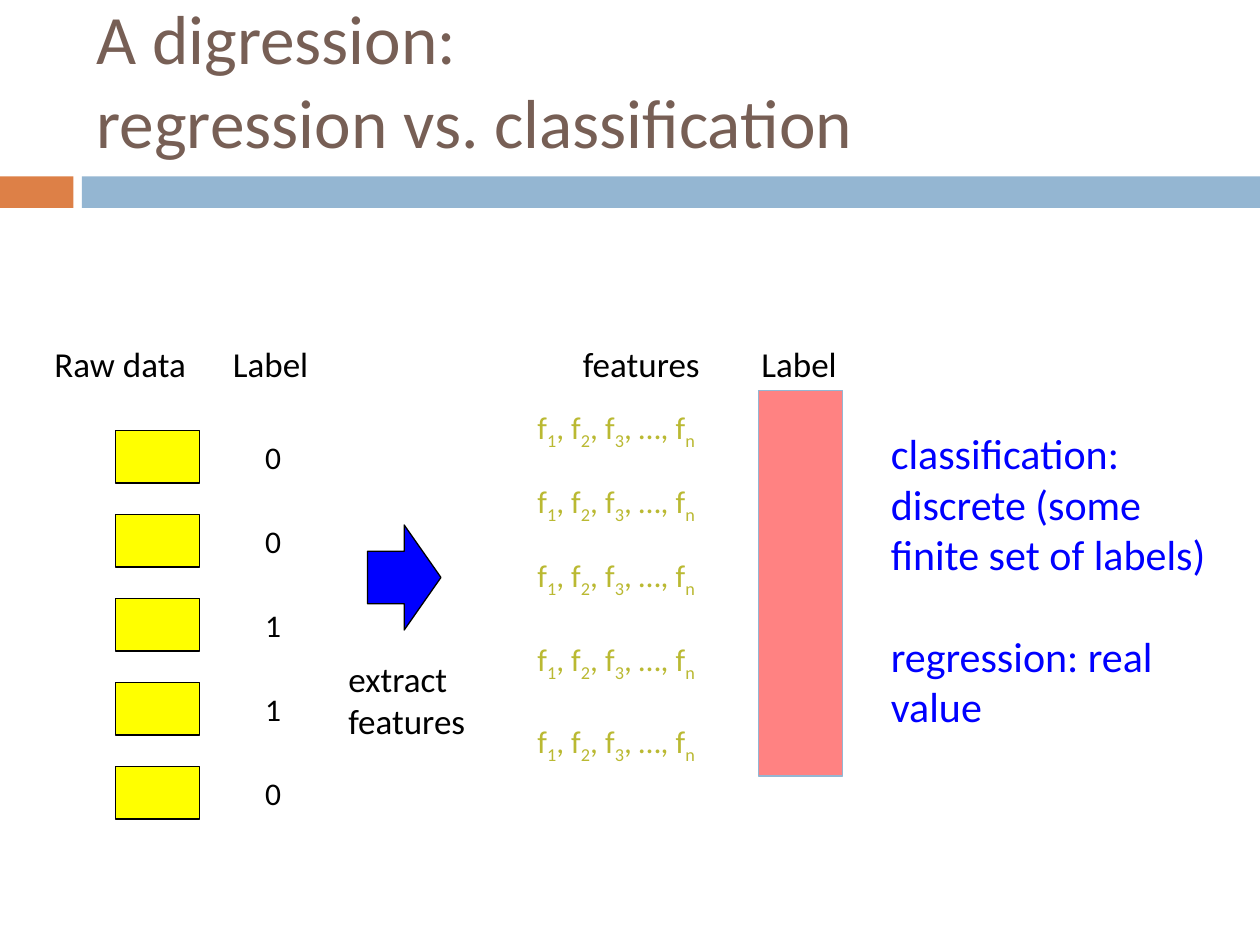
import pptx
import pptx.dml.color
import pptx.enum.shapes
import pptx.enum.text
import pptx.util
from lxml import etree
from pptx.oxml.ns import qn

Pt = pptx.util.Pt
SHAPES = pptx.enum.shapes.MSO_SHAPE
FONT = "Calibri"
COLORS = {
    "title": "775F55",
    "orange": "DD8047",
    "sky": "94B6D2",
    "black": "000000",
    "yellow": "FFFF00",
    "blue": "0000FF",
    "red": "FF0000",
    "olive": "BAB932",
}
ROW_GAP = 48
FEATURES = [("f", 0), ("1", 1), (", f", 0), ("2", 1), (", f", 0), ("3", 1),
            (", …, f", 0), ("n", 1)]


def rgb(name):
    return pptx.dml.color.RGBColor.from_string(COLORS[name])


def add_span(para, text, size, color, subscript=False):
    span = para.add_run()
    span.text = text
    span.font.name = FONT
    span.font.size = Pt(size)
    span.font.color.rgb = rgb(color)
    if subscript:
        span._r.get_or_add_rPr().set("baseline", "-25000")


def add_text(slide, box, paras, size, color="black", wrap=False, gap=0):
    """Add a text box; each paragraph is a list of (text, subscript) runs."""
    frame = slide.shapes.add_textbox(*map(Pt, box)).text_frame
    frame.word_wrap = wrap
    frame.auto_size = pptx.enum.text.MSO_AUTO_SIZE.SHAPE_TO_FIT_TEXT
    for index, spans in enumerate(paras):
        para = frame.add_paragraph() if index else frame.paragraphs[0]
        if index and gap:
            para.space_before = Pt(gap)
        for text, subscript in spans:
            add_span(para, text, size, color, subscript)


def add_block(slide, kind, box, fill, line=None, weight=0.75):
    block = slide.shapes.add_shape(kind, *map(Pt, box))
    block.shadow.inherit = False
    block.fill.solid()
    block.fill.fore_color.rgb = rgb(fill)
    if line:
        block.line.color.rgb = rgb(line)
        block.line.width = Pt(weight)
    else:
        block.line.fill.background()
    return block


def add_header(slide, left, top, width):
    add_block(slide, SHAPES.RECTANGLE, (left, top + 100.8, 42, 18), "orange")
    add_block(slide, SHAPES.RECTANGLE,
              (left + 46.8, top + 100.8, width - 46.8, 18), "sky")
    title = slide.shapes.title
    title.left, title.top = Pt(left + 48), Pt(top + 6)
    title.width, title.height = Pt(642), Pt(78)
    frame = title.text_frame
    frame.word_wrap = True
    frame.auto_size = pptx.enum.text.MSO_AUTO_SIZE.NONE
    frame.vertical_anchor = pptx.enum.text.MSO_ANCHOR.MIDDLE
    para = frame.paragraphs[0]
    para.alignment = pptx.enum.text.PP_ALIGN.LEFT
    add_span(para, "A digression: ", 39.6, "title")
    para.add_line_break()
    add_span(para, "regression vs. classification", 39.6, "title")


def add_raw_data(slide, left, top):
    add_text(slide, (left, top, 100, 31.5), [[("Raw data", 0)]], 20)
    add_text(slide, (left + 102, top, 64, 31.5), [[("Label", 0)]], 20)
    for row, label in enumerate("00110"):
        row_top = top + 54 + row * ROW_GAP
        add_block(slide, SHAPES.RECTANGLE, (left + 42, row_top, 48, 30),
                  "yellow", "black")
        add_text(slide, (left + 120.5, row_top + 0.5, 24.5, 29),
                 [[(label, 0)]], 18)


def add_extraction(slide, left, top):
    add_block(slide, SHAPES.RIGHT_ARROW, (left + 18, top, 42, 60),
              "blue", "black")
    add_text(slide, (left, top + 72, 88.5, 55.5),
             [[("extract", 0)], [("features", 0)]], 20)


def add_feature_table(slide, left, top):
    add_text(slide, (left + 26, top, 88, 31.5), [[("features", 0)]], 20)
    add_text(slide, (left + 128, top, 64, 31.5), [[("Label", 0)]], 20)
    for offset in (37.5, 80, 122, 170, 217):
        add_text(slide, (left, top + offset, 120, 29), [FEATURES], 18, "olive")
    column = add_block(slide, SHAPES.RECTANGLE,
                       (left + 133.5, top + 31, 48, 220.5), "red", "sky", 0.79)
    color = column._element.spPr.find(qn("a:solidFill"))[0]
    etree.SubElement(color, qn("a:alpha")).set("val", "49000")


def add_definitions(slide, left, top):
    add_text(slide, (left, top, 212, 181.5),
             [[("classification: discrete (some finite set of labels)", 0)],
              [("regression: real value", 0)]],
             24, "blue", wrap=True, gap=29.3)


def main():
    deck = pptx.Presentation()
    deck.slide_width, deck.slide_height = Pt(720), Pt(540)
    slide = deck.slides.add_slide(deck.slide_layouts.get_by_name("Title Only"))
    add_header(slide, 0, 0, 720)
    add_raw_data(slide, 24, 192)
    add_extraction(slide, 192, 300)
    add_feature_table(slide, 300, 192)
    add_definitions(slide, 502, 241)
    deck.save("out.pptx")


if __name__ == "__main__":
    main()
